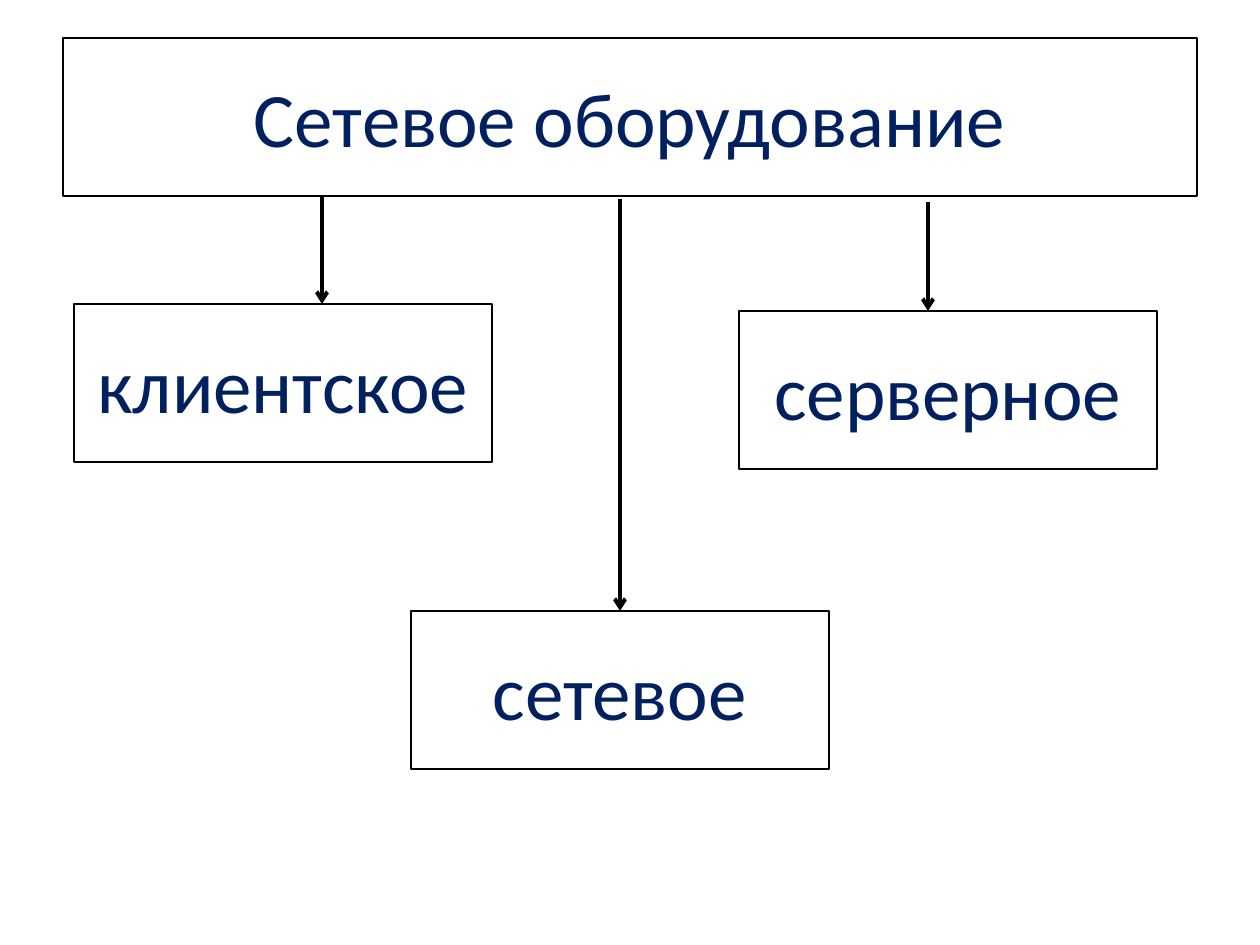
from dataclasses import dataclass

from lxml import etree
from pptx import Presentation
from pptx import util as u
from pptx.dml.color import RGBColor
from pptx.enum import shapes, text
from pptx.oxml.ns import qn

PX_PER_INCH = 126
BLANK_LAYOUT = 6
TOP_SIDE = 0


@dataclass(frozen=True)
class Theme:
    font: str = "Calibri"
    text_size: float = 44
    text_color: str = "002060"
    line_color: str = "000000"
    border_width: float = 0.75
    arrow_width: float = 2.25


def px(length):
    """Turn slide pixels into EMU."""
    return u.Emu(round(length * u.Inches(1) / PX_PER_INCH))


class Diagram:
    def __init__(self, slide, theme):
        self.slide = slide
        self.theme = theme

    def style_line(self, line, width):
        line.color.rgb = RGBColor.from_string(self.theme.line_color)
        line.width = u.Pt(width)

    def box(self, label, left, top, width, height):
        box = self.slide.shapes.add_shape(
            shapes.MSO_SHAPE.RECTANGLE, px(left), px(top), px(width), px(height))
        box.shadow.inherit = False
        box.fill.background()
        self.style_line(box.line, self.theme.border_width)
        frame = box.text_frame
        frame.text = label
        frame.word_wrap = True
        frame.vertical_anchor = text.MSO_ANCHOR.MIDDLE
        para = frame.paragraphs[0]
        para.alignment = text.PP_ALIGN.CENTER
        font = para.runs[0].font
        font.name = self.theme.font
        font.size = u.Pt(self.theme.text_size)
        font.color.rgb = RGBColor.from_string(self.theme.text_color)
        return box

    def arrow_down(self, x, top, bottom):
        arrow = self.slide.shapes.add_connector(
            shapes.MSO_CONNECTOR.STRAIGHT, px(x), px(top), px(x), px(bottom))
        self.style_line(arrow.line, self.theme.arrow_width)
        etree.SubElement(arrow.line._get_or_add_ln(), qn("a:tailEnd"), type="arrow")
        etree.SubElement(arrow._element.spPr, qn("a:effectLst"))
        return arrow


def main():
    deck = Presentation()
    deck.slide_width, deck.slide_height = px(1260), px(945)
    slide = deck.slides.add_slide(deck.slide_layouts[BLANK_LAYOUT])
    diagram = Diagram(slide, Theme())

    box_width, box_height = 418, 158
    diagram.box("Сетевое оборудование", 63, 38, 1134, box_height)

    # label, box left, box top, arrow x, arrow start
    branches = [
        ("клиентское", 74, 304, 322, 196),
        ("серверное", 739, 311, 928, 202),
        ("сетевое", 411, 611, 620, 199),
    ]
    for label, left, top, arrow_x, arrow_top in branches:
        box = diagram.box(label, left, top, box_width, box_height)
        arrow = diagram.arrow_down(arrow_x, arrow_top, top)
        if arrow_x == left + box_width // 2:
            arrow.end_connect(box, TOP_SIDE)

    deck.save("out.pptx")


if __name__ == "__main__":
    main()
